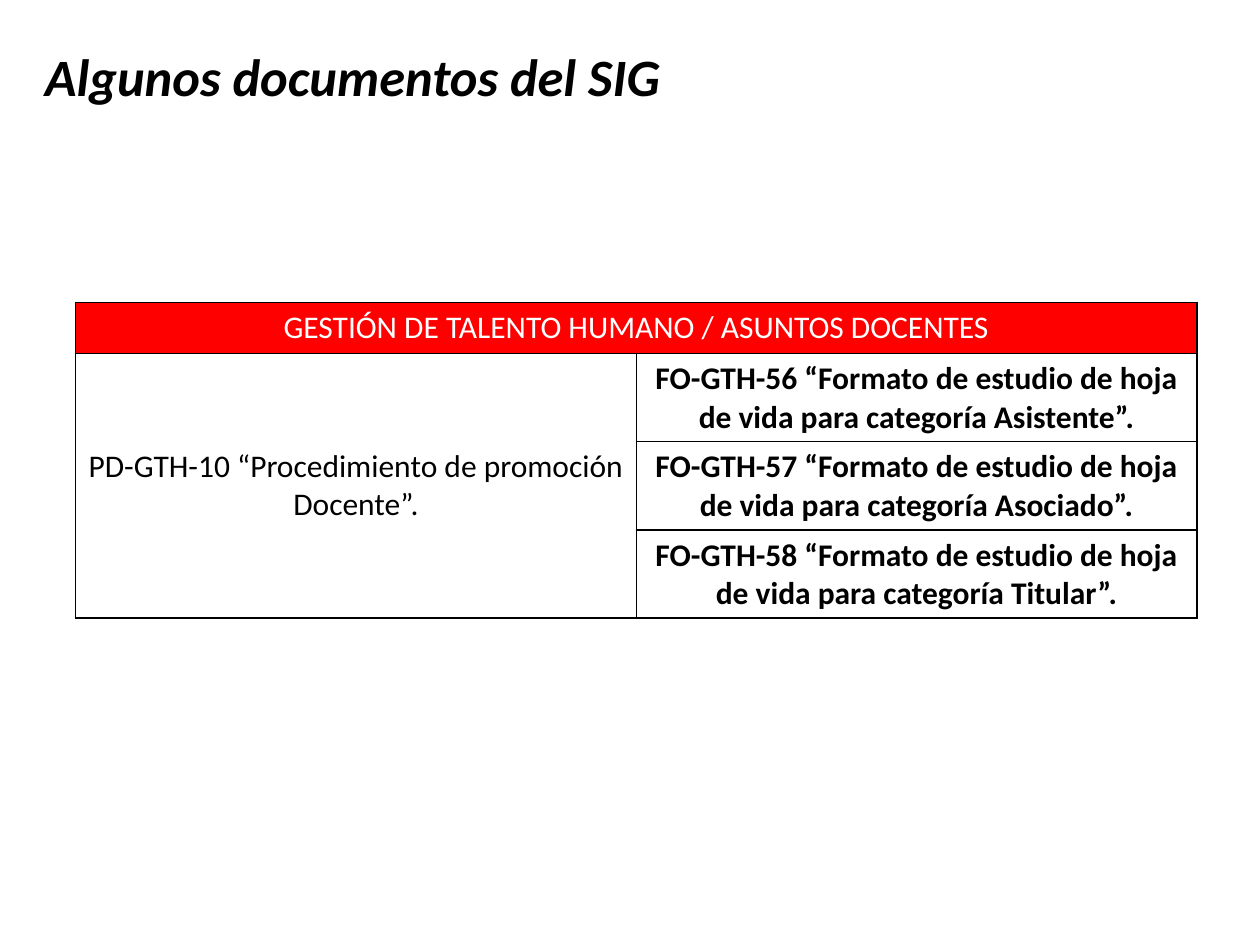
import lxml.etree
import pptx
import pptx.dml.color
import pptx.enum.text
import pptx.oxml.ns
import pptx.util

BLACK = pptx.dml.color.RGBColor(0x00, 0x00, 0x00)
WHITE = pptx.dml.color.RGBColor(0xFF, 0xFF, 0xFF)
RED = pptx.dml.color.RGBColor(0xFF, 0x00, 0x00)

FORMATS = [
    ("56", "Asistente"),
    ("57", "Asociado"),
    ("58", "Titular"),
]


class SlideBuilder:
    """Places elements by shares of the slide's width and height."""

    font_name = "Calibri"
    title_size = pptx.util.Pt(30)
    table_size = pptx.util.Pt(18)
    border_width = pptx.util.Pt(1)

    def __init__(self, presentation):
        self.width = presentation.slide_width
        self.height = presentation.slide_height
        self.slide = presentation.slides.add_slide(presentation.slide_layouts[6])

    def box(self, left, top, width, height):
        return (int(left * self.width), int(top * self.height),
                int(width * self.width), int(height * self.height))

    def style_text(self, text_frame, size, color, bold=False, italic=False):
        for paragraph in text_frame.paragraphs:
            paragraph.alignment = pptx.enum.text.PP_ALIGN.CENTER
            for run in paragraph.runs:
                run.font.name = self.font_name
                run.font.size = size
                run.font.color.rgb = color
                run.font.bold = bold
                run.font.italic = italic

    def add_title(self, text, share):
        shape = self.slide.shapes.add_textbox(*self.box(*share))
        text_frame = shape.text_frame
        text_frame.word_wrap = True
        text_frame.text = text
        self.style_text(text_frame, self.title_size, BLACK, bold=True, italic=True)

    def add_table(self, share, columns, row_shares):
        """Add a bordered, unfilled table; row_shares divide its height."""
        left, top, width, height = self.box(*share)
        frame = self.slide.shapes.add_table(
            len(row_shares), columns, left, top, width, height)
        table = frame.table
        for row, row_share in zip(table.rows, row_shares):
            row.height = int(height * row_share / sum(row_shares))
        for cell in table.iter_cells():
            self.add_borders(cell)
            cell.fill.background()
        return table

    def add_borders(self, cell):
        properties = cell._tc.get_or_add_tcPr()
        for side in ("a:lnL", "a:lnR", "a:lnT", "a:lnB"):
            line = lxml.etree.SubElement(
                properties, pptx.oxml.ns.qn(side), w=str(self.border_width))
            fill = lxml.etree.SubElement(line, pptx.oxml.ns.qn("a:solidFill"))
            lxml.etree.SubElement(
                fill, pptx.oxml.ns.qn("a:srgbClr"), val=str(BLACK))

    def write_cell(self, cell, text, color=BLACK, bold=False):
        cell.text_frame.text = text
        cell.vertical_anchor = pptx.enum.text.MSO_ANCHOR.MIDDLE
        self.style_text(cell.text_frame, self.table_size, color, bold)


def main():
    presentation = pptx.Presentation()
    presentation.slide_width = pptx.util.Inches(10)
    presentation.slide_height = pptx.util.Inches(7.5)
    builder = SlideBuilder(presentation)

    builder.add_title("Algunos documentos del SIG", (0.02, 0.04, 0.52, 0.08))

    row_shares = [0.41] + [0.7] * len(FORMATS)
    table = builder.add_table((0.06, 0.32, 0.89, 0.33), 2, row_shares)

    header = table.cell(0, 0)
    header.merge(table.cell(0, 1))
    header.fill.solid()
    header.fill.fore_color.rgb = RED
    builder.write_cell(header, "GESTIÓN DE TALENTO HUMANO / ASUNTOS DOCENTES", WHITE)

    procedure = table.cell(1, 0)
    procedure.merge(table.cell(len(FORMATS), 0))
    builder.write_cell(procedure, "PD-GTH-10 “Procedimiento de promoción Docente”.")

    for row, (number, category) in enumerate(FORMATS, start=1):
        text = (f"FO-GTH-{number} “Formato de estudio de hoja de vida "
                f"para categoría {category}”.")
        builder.write_cell(table.cell(row, 1), text, bold=True)

    presentation.save("out.pptx")


if __name__ == "__main__":
    main()
